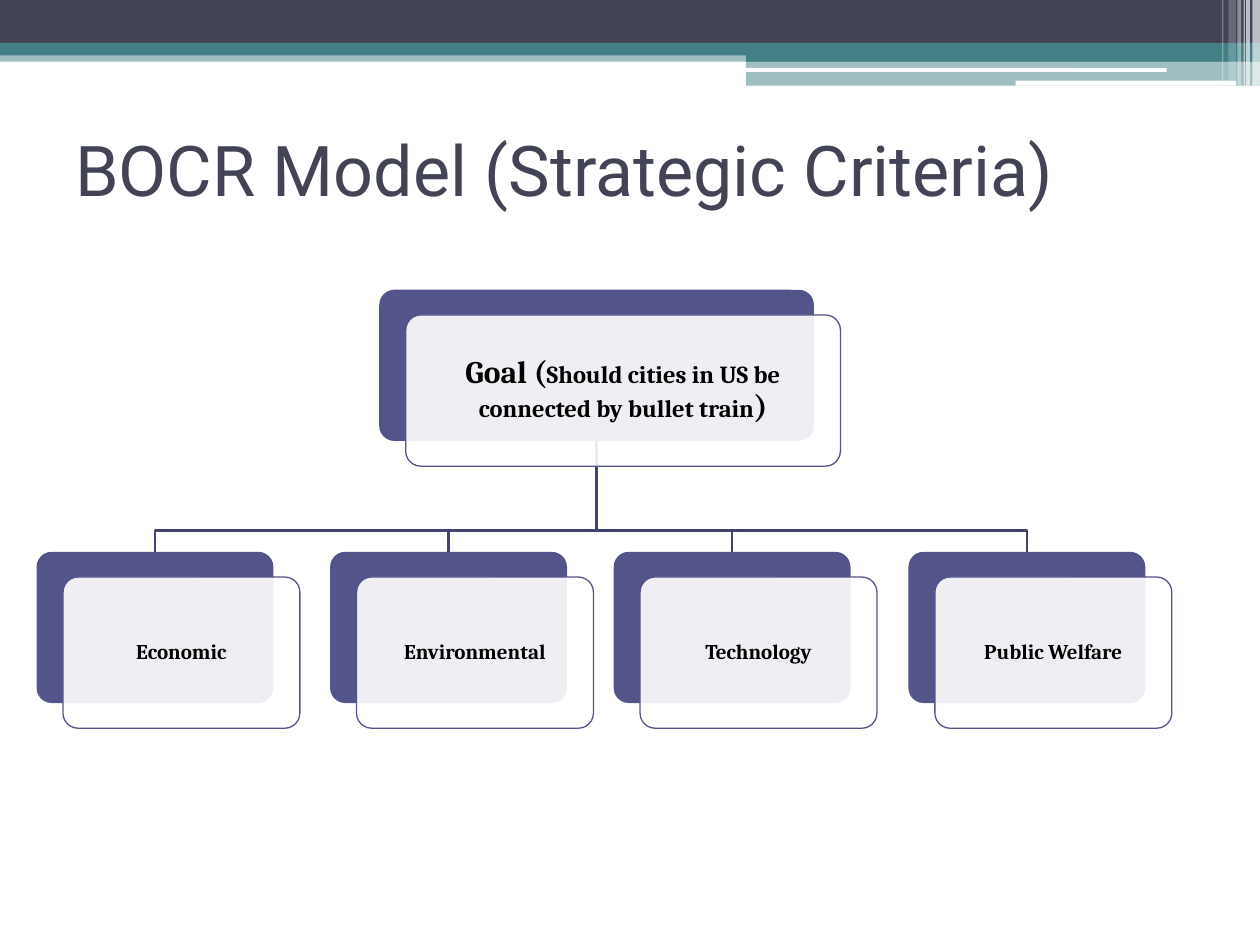
from lxml import etree
from pptx import Presentation, util as u
from pptx.dml.color import RGBColor
from pptx.enum import shapes, text
from pptx.oxml.ns import qn

COLS, ROWS = 100, 75
RECT = shapes.MSO_SHAPE.RECTANGLE
ROUND = shapes.MSO_SHAPE.ROUNDED_RECTANGLE
SLATE, TEAL, WHITE, BLACK = "424456", "438086", "FFFFFF", "000000"
PURPLE, LINK = "53548A", "42436F"


def color(value):
    return RGBColor.from_string(value)


class Deck:
    title_font = "Roboto"
    body_font = "Cambria"

    def __init__(self):
        self.prs = Presentation()
        self.prs.slide_width = u.Inches(10)
        self.prs.slide_height = u.Inches(7.5)
        self.s = self.prs.slides.add_slide(self.prs.slide_layouts[6])

    def x(self, cols):
        return round(self.prs.slide_width * cols / COLS)

    def y(self, rows):
        return round(self.prs.slide_height * rows / ROWS)

    def frame(self, left, top, width, height):
        return self.x(left), self.y(top), self.x(width), self.y(height)

    def shape(self, kind, at, fill, alpha=100, line=None, radius=None):
        sp = self.s.shapes.add_shape(kind, *self.frame(*at))
        sp.shadow.inherit = False
        sp.fill.solid()
        sp.fill.fore_color.rgb = color(fill)
        if alpha < 100:
            clr = sp._element.spPr.find(qn("a:solidFill"))[0]
            etree.SubElement(clr, qn("a:alpha"), val=str(alpha * 1000))
        if line:
            sp.line.color.rgb = color(line)
            sp.line.width = u.Pt(0.75)
        else:
            sp.line.fill.background()
        if radius:
            sp.adjustments[0] = radius
        return sp

    def label(self, sp, runs, font, fill, bold, align, inset=None):
        tf = sp.text_frame
        tf.word_wrap = True
        tf.vertical_anchor = text.MSO_ANCHOR.MIDDLE
        if inset:
            tf.margin_left = tf.margin_right = u.Inches(inset)
            tf.margin_top = tf.margin_bottom = u.Inches(inset)
        p = tf.paragraphs[0]
        p.alignment = align
        for words, size in runs:
            r = p.add_run()
            r.text = words
            r.font.name = font
            r.font.size = u.Pt(size)
            r.font.bold = bold
            r.font.color.rgb = color(fill)
        return p

    def title(self, at, words):
        sp = self.s.shapes.add_textbox(*self.frame(*at))
        self.label(sp, [(words, 40)], self.title_font, SLATE, False, text.PP_ALIGN.LEFT)

    def card(self, left, top, width, height, runs, inset):
        self.shape(ROUND, (left, top, width, height), PURPLE, radius=0.1)
        front = (left + 2.1, top + 2, width, height)
        sp = self.shape(ROUND, front, WHITE, 90, PURPLE, 0.1)
        p = self.label(sp, runs, self.body_font, BLACK, True, text.PP_ALIGN.CENTER, inset)
        p.line_spacing = 0.9

    def branch(self, start, bend, end):
        points = [start, (start[0], bend), (end[0], bend), end]
        points = [(self.x(px), self.y(py)) for px, py in points]
        builder = self.s.shapes.build_freeform(*points[0])
        builder.add_line_segments(points[1:], close=False)
        sp = builder.convert_to_shape()
        sp.shadow.inherit = False
        sp.fill.background()
        sp.line.color.rgb = color(LINK)
        sp.line.width = u.Pt(1.5)


def add_header(deck):
    bands = [
        ((0, 4, 100, 0.9), TEAL, 50),
        ((0, 0, 100, 3.4), SLATE, 100),
        ((0, 3.4, 100, 1), TEAL, 100),
        ((59.2, 3.9, 40.8, 1), TEAL, 100),
        ((59.2, 4.8, 40.8, 2), TEAL, 50),
    ]
    for at, fill, alpha in bands:
        deck.shape(RECT, at, fill, alpha)
    for at in [(59.1, 5.4, 33.5, 0.3), (80.6, 6.4, 17.5, 0.4)]:
        deck.shape(ROUND, at, WHITE, radius=0.167)
    stripes = [
        (99.4, 0.6, 6.8, 65), (98.9, 0.3, 6.8, 65), (98.7, 0.1, 6.8, 60),
        (98.2, 0.3, 6.8, 40), (97.5, 0.6, 6.4, 20), (97, 0.1, 6.4, 30),
    ]
    for left, width, height, alpha in stripes:
        deck.shape(RECT, (left, 0, width, height), WHITE, alpha)


def add_hierarchy(deck):
    goal_left, goal_top, goal_width, height = 30.1, 23, 34.5, 12
    child_top, child_width = 43.8, 18.8
    criteria = {"Economic": 2.9, "Environmental": 26.2,
                "Technology": 48.7, "Public Welfare": 72.1}
    root = (goal_left + goal_width / 2, goal_top + height)
    for left in reversed(list(criteria.values())):
        deck.branch(root, 42.1, (left + child_width / 2, child_top))
    goal = [("Goal (", 18),
            ("Should cities in US be connected by bullet train", 14), (")", 18)]
    deck.card(goal_left, goal_top, goal_width, height, goal, 0.07)
    for name, left in criteria.items():
        deck.card(left, child_top, child_width, height, [(name, 12)], 0.05)


def main():
    deck = Deck()
    add_header(deck)
    deck.title((5, 7.5, 90, 11.7), "BOCR Model (Strategic Criteria)")
    add_hierarchy(deck)
    deck.prs.save("out.pptx")


if __name__ == "__main__":
    main()
